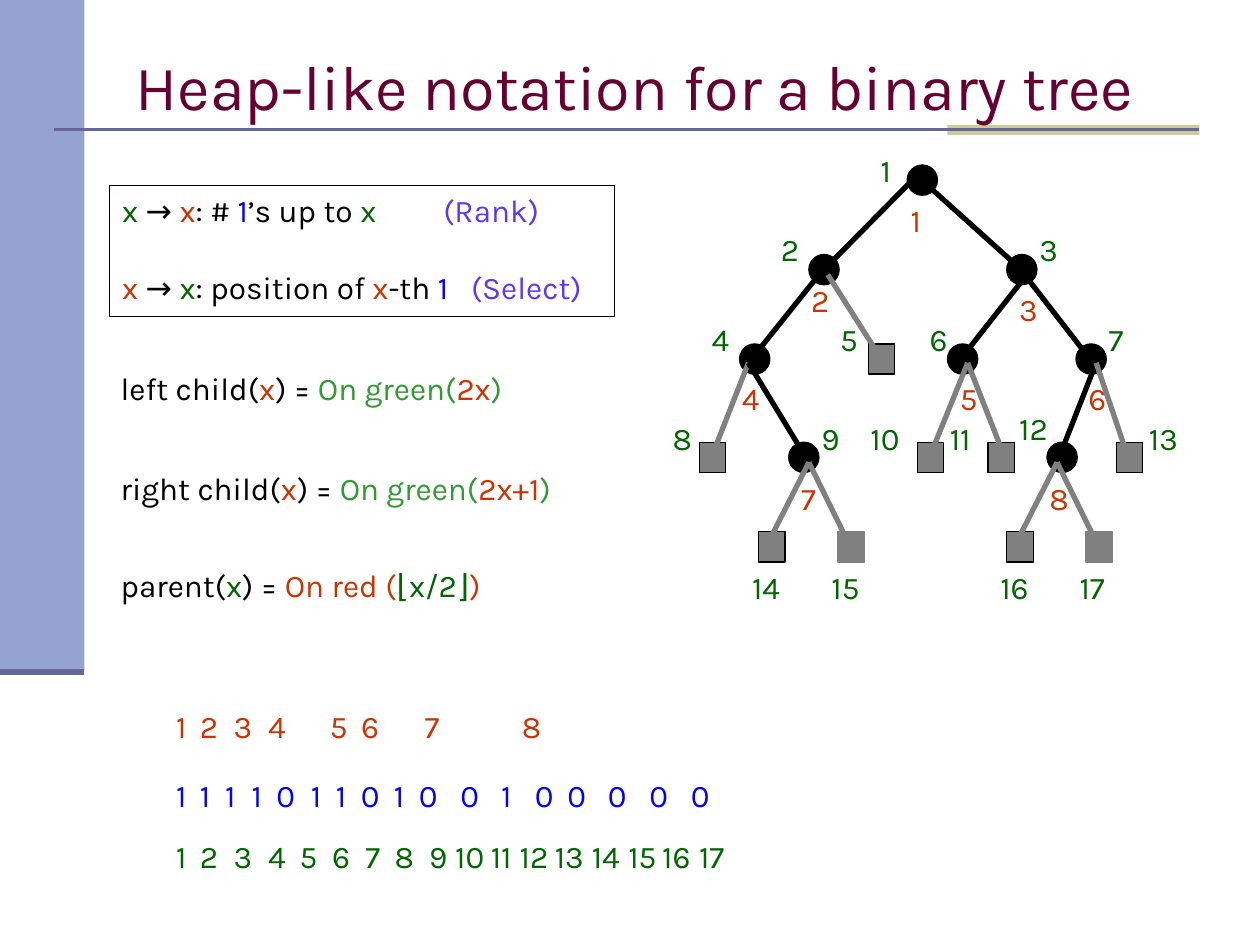
"""Build a slide on heap-like notation for a binary tree."""
from lxml.etree import SubElement as Sub
from pptx import Presentation
from pptx.dml.color import RGBColor as Rgb
from pptx.enum.shapes import MSO_CONNECTOR as Conn, MSO_SHAPE as Shape
from pptx.enum.text import MSO_ANCHOR as Anchor
from pptx.oxml.ns import qn
from pptx.util import Inches, Pt

BLACK, GRAY = Rgb(0, 0, 0), Rgb(0x80, 0x80, 0x80)
GREEN, LIME = Rgb(0, 0x66, 0), Rgb(0x33, 0x99, 0x33)
RED, BLUE = Rgb(0xCC, 0x33, 0), Rgb(0, 0, 0xFF)
WINE, VIOLET = Rgb(0x66, 0, 0x33), Rgb(0x5C, 0x37, 0xFB)
SKY, SAND = Rgb(0x95, 0xA3, 0xD1), Rgb(0xCC, 0xCC, 0x99)
SLATE = Rgb(0x66, 0x66, 0x99)
FONT = {"name": "Karla", "size": Pt(18)}
HEAD = {"name": "Karla", "size": Pt(36)}
MATH = {"name": "Calibri", "size": Pt(18)}
FRAME = {"word_wrap": True, "vertical_anchor": Anchor.TOP}

TITLE = "Heap-like notation for a binary tree"
BITS = "11110110100100000"
NODES = [
    ((7.2, 1.31), (6.89, 1.15), None),
    ((6.42, 2.02), (6.1, 1.78), (7.28, 1.39, 6.5, 2.18)),
    ((7.99, 2.02), (8.15, 1.78), (7.36, 1.47, 8.15, 2.18)),
    ((5.87, 2.73), (5.55, 2.49), (6.5, 2.18, 5.94, 2.88)),
    ((6.89, 2.73), (6.57, 2.49), (6.57, 2.18, 6.97, 2.81)),
    ((7.52, 2.73), (7.28, 2.49), (8.15, 2.18, 7.6, 2.88)),
    ((8.54, 2.73), (8.7, 2.49), (8.07, 2.1, 8.62, 2.81)),
    ((5.55, 3.51), (5.24, 3.28), (5.94, 2.88, 5.63, 3.67)),
    ((6.26, 3.51), (6.42, 3.28), (5.94, 2.88, 6.42, 3.67)),
    ((7.28, 3.51), (6.81, 3.28), (7.68, 2.88, 7.36, 3.67)),
    ((7.84, 3.51), (7.44, 3.28), (7.68, 2.88, 7.99, 3.67)),
    ((8.31, 3.51), (7.99, 3.2), (8.7, 2.88, 8.39, 3.67)),
    ((8.86, 3.51), (9.02, 3.28), (8.7, 2.88, 8.94, 3.59)),
    ((6.02, 4.22), (5.87, 4.46), (6.42, 3.67, 6.1, 4.3)),
    ((6.65, 4.22), (6.5, 4.46), (6.42, 3.67, 6.73, 4.3)),
    ((7.99, 4.22), (7.84, 4.46), (8.39, 3.67, 8.07, 4.3)),
    ((8.62, 4.22), (8.47, 4.46), (8.39, 3.67, 8.7, 4.3)),
]
BARE = 15, 17
RANKS = [(7.13, 1.55), (6.34, 2.18), (7.99, 2.25), (5.79, 2.96),
         (7.52, 2.96), (8.54, 2.96), (6.26, 3.75), (8.23, 3.75)]
ROWS = [
    (5.56, RED, range(1, 9),
     [1.66, 1.93, 2.2, 2.69, 2.94, 3.43, 4.22]),
    (6.11, BLUE, BITS,
     [1.63, 1.83, 2.04, 2.27, 2.51, 2.71, 2.94, 3.17,
      3.4, 3.73, 4.02, 4.32, 4.58, 4.9, 5.23, 5.56]),
    (6.59, GREEN, range(1, 18),
     [1.66, 1.93, 2.2, 2.45, 2.71, 2.96, 3.21, 3.48,
      3.73, 3.98, 4.24, 4.52, 4.81, 5.1, 5.37, 5.65]),
]
RULES = [
    (2.88, [("left child(", BLACK), ("x", RED), (") = ", BLACK),
            ("On green(", LIME), ("2x", RED), (")", LIME)]),
    (3.67, [("right child(", BLACK), ("x", RED), (") = ", BLACK),
            ("On green(", LIME), ("2x+1", RED), (")", LIME)]),
    (4.44, [("parent(", BLACK), ("x", GREEN), (") = ", BLACK),
            ("On red (", RED), ("⌊", GREEN, MATH), ("x/2", GREEN),
            ("⌋", GREEN, MATH), (")", RED)]),
]
MAPS = [
    (2.55, [("x ", GREEN), ("→ ", BLACK), ("x", RED), (": # ", BLACK),
            ("1", BLUE), ("’s up to ", BLACK), ("x", GREEN),
            ("\t(Rank)", VIOLET)]),
    (2.77, [("x ", RED), ("→ ", BLACK), ("x", GREEN),
            (": position of ", BLACK), ("x", RED), ("-th ", BLACK),
            ("1", BLUE), ("\t(Select)", VIOLET)]),
]

deck = Presentation()
deck.slide_width, deck.slide_height = Inches(10), Inches(7.5)
slide = deck.slides.add_slide(deck.slide_layouts[6])


def block(kind, box, fill=None, edge=None):
    item = slide.shapes.add_shape(kind, *map(Inches, box))
    item.shadow.inherit = False
    for part, color in ((item.fill, fill), (item.line.fill, edge)):
        if color is None:
            part.background()
        else:
            part.solid()
            part.fore_color.rgb = color
    if edge is not None:
        item.line.width = Pt(0.75)
    return item


def link(ends, color, width):
    line = slide.shapes.add_connector(Conn.STRAIGHT, *map(Inches, ends))
    line.line.color.rgb, line.line.width = color, Pt(width)
    Sub(line._element.spPr, qn("a:effectLst"))


def write(para, parts):
    for text, color, *font in parts:
        run = para.add_run()
        run.text = text
        run.font.color.rgb = color
        for key, val in (font[0] if font else FONT).items():
            setattr(run.font, key, val)


def label(box, parts, form=FRAME):
    frame = slide.shapes.add_textbox(*map(Inches, box)).text_frame
    for key, val in form.items():
        setattr(frame, key, val)
    write(frame.paragraphs[0], parts)
    return frame.paragraphs[0]


def stops(para, spots, align):
    tabs = Sub(para._p.get_or_add_pPr(), qn("a:tabLst"))
    for spot in spots:
        Sub(tabs, qn("a:tab"), pos=str(Inches(spot)), algn=align)


def frame_deck():
    block(Shape.RECTANGLE, (0, 0, 0.67, 5.33), SKY)
    block(Shape.RECTANGLE, (7.52, 0.99, 2, 0.08), SAND)
    link((0.43, 1.03, 9.52, 1.03), SLATE, 1.5)
    link((0, 5.33, 0.67, 5.33), SLATE, 3.5)
    label((0.98, 0.28, 8.5, 0.79), [(TITLE, WINE, HEAD)],
          FRAME | {"vertical_anchor": Anchor.MIDDLE})


def draw_tree():
    for num, (bit, (spot, _, _)) in enumerate(zip(BITS, NODES), 1):
        if bit == "1":
            block(Shape.OVAL, (*spot, 0.24, 0.24), BLACK, BLACK)
        else:
            edge = GRAY if num in BARE else BLACK
            block(Shape.RECTANGLE, (*spot, 0.21, 0.24), GRAY, edge)
    for bit, (_, _, ends) in zip(BITS, NODES):
        if ends:
            link(ends, BLACK if bit == "1" else GRAY, 3)
    marks = [(node[1], GREEN) for node in NODES]
    for group in (marks, [(spot, RED) for spot in RANKS]):
        for num, (spot, color) in enumerate(group, 1):
            wide = 0.36 if num < 10 else 0.52
            label((*spot, wide, 0.4), [(str(num), color)])


def draw_text():
    for top, color, items, spots in ROWS:
        text = "\t".join(map(str, items))
        para = label((1.3, top, 6.4, 0.4), [(text, color)])
        stops(para, [spot - 1.4 for spot in spots], "ctr")
    for top, parts in RULES:
        label((0.86, top, 3.8, 0.4), parts)
    frame = block(Shape.RECTANGLE, (0.87, 1.47, 4.01, 1.04),
                  edge=BLACK).text_frame
    for key, val in FRAME.items():
        setattr(frame, key, val)
    for num, (spot, parts) in enumerate(MAPS):
        para = frame.add_paragraph() if num else frame.paragraphs[0]
        para.alignment = 1
        para.space_before = Pt(22 * num)
        stops(para, [spot], "l")
        write(para, parts)


if __name__ == "__main__":
    frame_deck()
    draw_tree()
    draw_text()
    deck.save("out.pptx")
